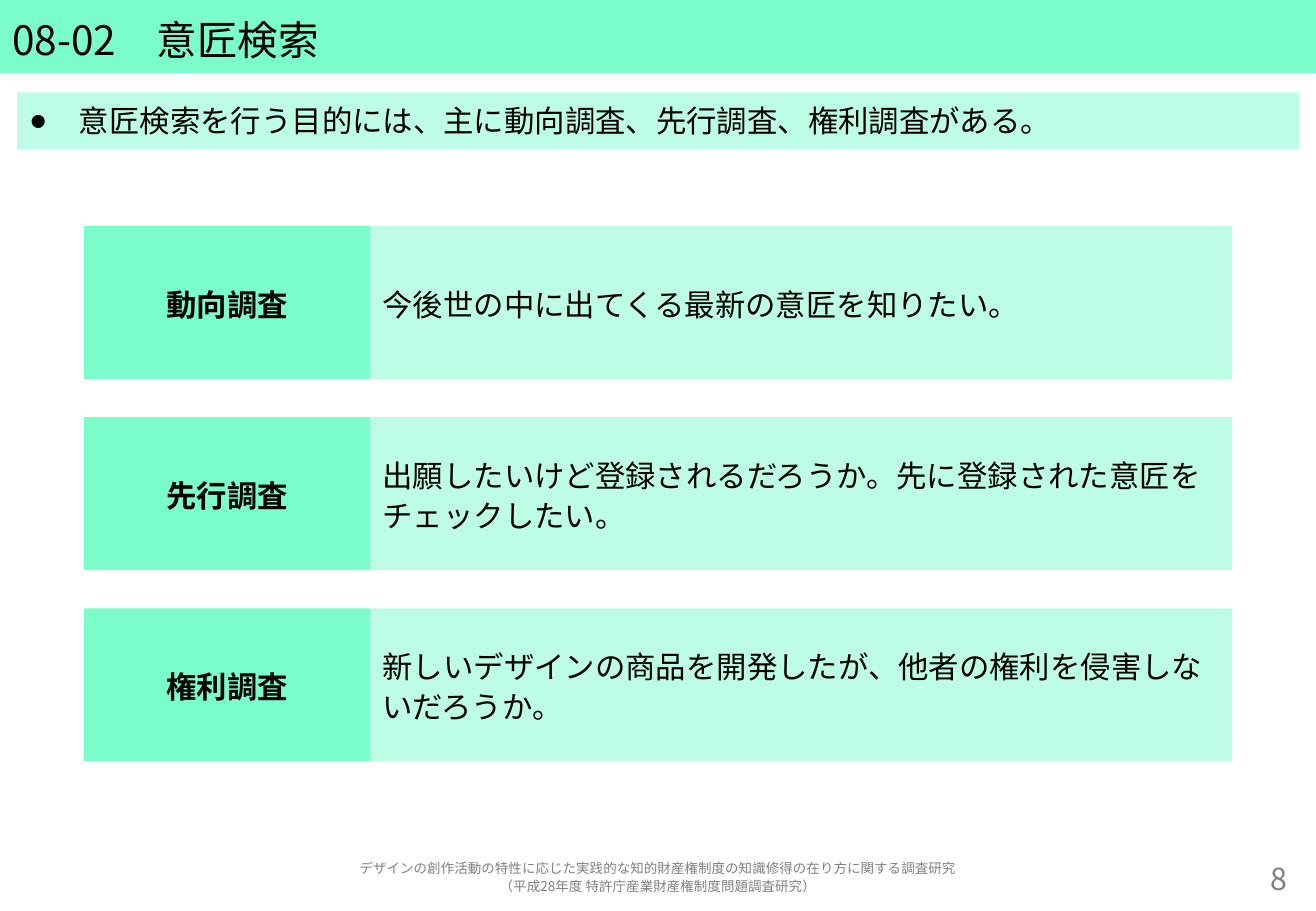
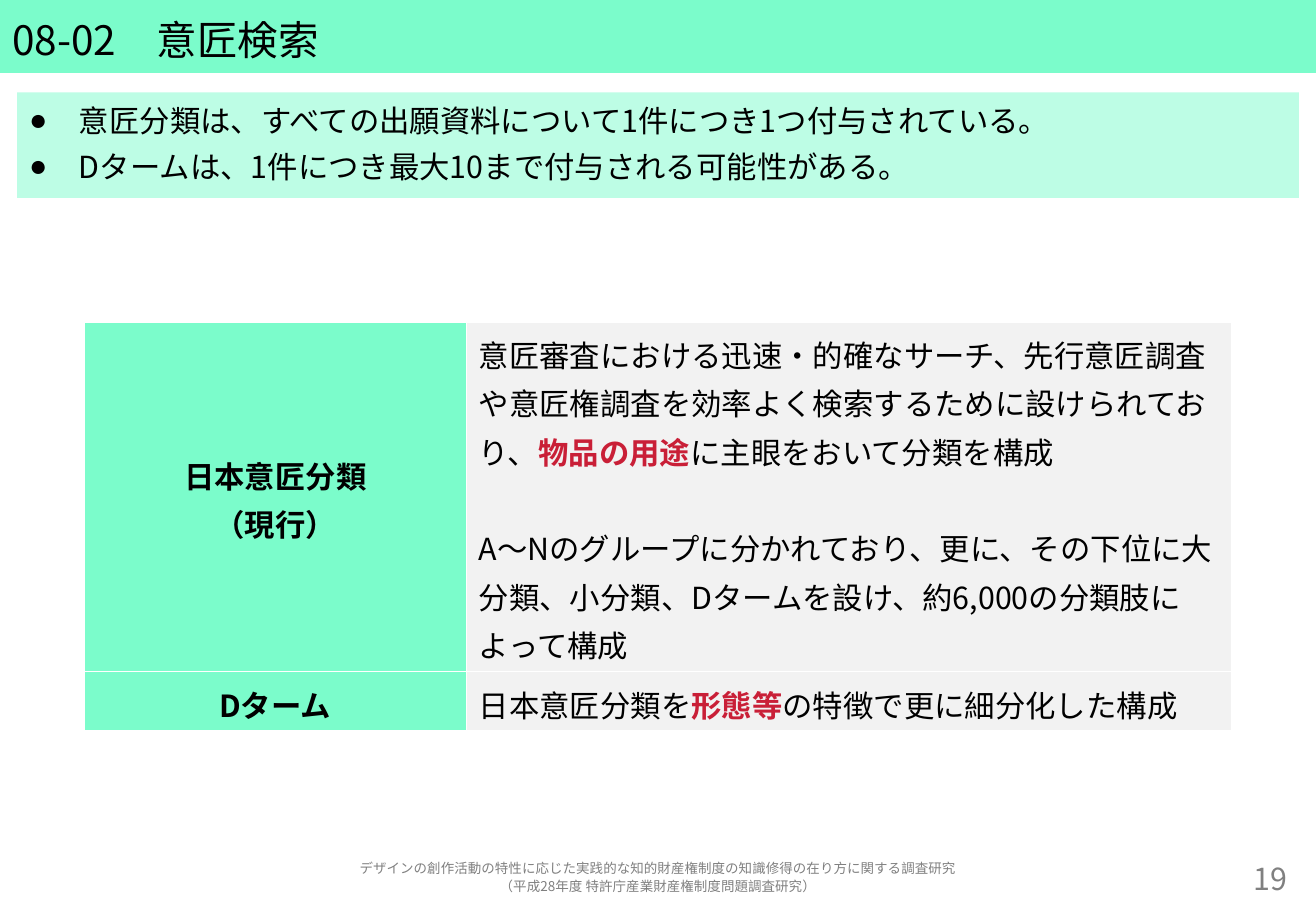
"""Build two slides on design searches."""
from pptx import Presentation
from pptx.dml.color import RGBColor as RGB
from pptx.enum.shapes import MSO_SHAPE as SHAPE
from pptx.enum.text import MSO_ANCHOR as ANCHOR, MSO_AUTO_SIZE as AUTO, PP_ALIGN as ALIGN
from pptx.oxml.ns import qn
from pptx.util import Inches, Pt
from lxml.etree import SubElement

COL = {"band": "7BFCCB", "pale": "BDFDE5", "grey": "F2F2F2", "foot": "808080",
       "ink": "000000", "red": "C91F37", "white": "FFFFFF"}
FONT = "Noto Sans CJK JP"


def paint(item, col):
    item.fill.solid()
    item.fill.fore_color.rgb = RGB.from_string(COL[col])


def write(frame, lines, size=18, bold=False, col="ink", align=ALIGN.LEFT,
          gap=0, bullet=False, anchor=ANCHOR.MIDDLE):
    """Fill a frame with paragraphs; parts between bars are bold red."""
    frame.word_wrap = True
    frame.vertical_anchor = anchor
    for i, line in enumerate(lines):
        para = frame.paragraphs[0] if i == 0 else frame.add_paragraph()
        para.alignment = align
        para.line_spacing = 1.1
        para.space_before = Pt(gap if i or bullet else 0)
        if bullet:
            prop = para._p.get_or_add_pPr()
            prop.set("marL", str(Inches(0.41)))
            prop.set("indent", str(-Inches(0.41)))
            SubElement(prop, qn("a:buChar"), char="●")
        for j, part in enumerate(line.split("|")):
            run = para.add_run()
            run.text = part
            font = run.font
            font.size = Pt(size)
            font.bold = bold or j % 2 == 1
            font.color.rgb = RGB.from_string(COL["red" if j % 2 else col])
            font.name = FONT
            SubElement(run._r.get_or_add_rPr(), qn("a:ea"), typeface=FONT)


deck = Presentation()
deck.slide_width, deck.slide_height = Inches(10.83), Inches(7.5)

FOOT = ["デザインの創作活動の特性に応じた実践的な知的財産権制度の知識修得の在り方に関する調査研究",
        "（平成28年度 特許庁産業財産権制度問題調査研究）"]
PAGES = [
    ("8", 0.47, ["意匠検索を行う目的には、主に動向調査、先行調査、権利調査がある。"]),
    ("19", 0.87, ["意匠分類は、すべての出願資料について1件につき1つ付与されている。",
                  "Dタームは、1件につき最大10まで付与される可能性がある。"]),
]
slides = []
for num, high, points in PAGES:
    slide = deck.slides.add_slide(deck.slide_layouts[1])
    slides.append(slide)
    title, body = slide.placeholders
    for box, area, col in ((title, (0, 0, 10.83, 0.6), "band"),
                           (body, (0.14, 0.76, 10.55, high), "pale")):
        box.left, box.top, box.width, box.height = map(Inches, area)
        paint(box, col)
        box.text_frame.auto_size = AUTO.NONE
    write(title.text_frame, ["08-02　意匠検索"], size=24)
    write(body.text_frame, points, gap=3.6, bullet=True, anchor=ANCHOR.TOP)
    for left, width, lines, size, align in ((9.35, 1.34, [num], 18, ALIGN.RIGHT),
                                            (0.14, 10.55, FOOT, 8, ALIGN.CENTER)):
        box = slide.shapes.add_textbox(Inches(left), Inches(7.06), Inches(width), Inches(0.31))
        write(box.text_frame, lines, size=size, col="foot", align=align)

KINDS = [
    ("動向調査", "今後世の中に出てくる最新の意匠を知りたい。"),
    ("先行調査", "出願したいけど登録されるだろうか。先に登録された意匠をチェックしたい。"),
    ("権利調査", "新しいデザインの商品を開発したが、他者の権利を侵害しないだろうか。"),
]
for i, (name, aim) in enumerate(KINDS):
    top = Inches(1.86 + i * 1.575)
    for left, width, col, words in ((0.69, 2.36, "band", name), (3.05, 7.09, "pale", aim)):
        box = slides[0].shapes.add_shape(SHAPE.RECTANGLE, Inches(left), top,
                                         Inches(width), Inches(1.26))
        box.shadow.inherit = False
        box.line.fill.background()
        paint(box, col)
        head = words == name
        write(box.text_frame, [words], bold=head, align=ALIGN.CENTER if head else ALIGN.LEFT)

ROWS = [
    (["日本意匠分類", "（現行）"],
     ["意匠審査における迅速・的確なサーチ、先行意匠調査や意匠権調査を効率よく検索するために設けられており、"
      "|物品の用途|に主眼をおいて分類を構成",
      "A～Nのグループに分かれており、更に、その下位に大分類、小分類、Dタームを設け、約6,000の分類肢によって構成"]),
    (["Dターム"], ["日本意匠分類を|形態等|の特徴で更に細分化した構成"]),
]
table = slides[1].shapes.add_table(2, 2, Inches(0.69), Inches(2.65),
                                   Inches(9.45), Inches(3.37)).table
table.first_row = table.horz_banding = False
table.columns[0].width, table.columns[1].width = Inches(3.15), Inches(6.3)
table.rows[0].height, table.rows[1].height = Inches(2.88), Inches(0.49)
for i, row in enumerate(ROWS):
    for j, lines in enumerate(row):
        cell = table.cell(i, j)
        prop = cell._tc.get_or_add_tcPr()
        for side in "LRTB":
            edge = SubElement(prop, qn("a:ln" + side), w=str(Pt(1)))
            fill = SubElement(edge, qn("a:solidFill"))
            SubElement(fill, qn("a:srgbClr"), val=COL["white"])
        paint(cell, "grey" if j else "band")
        cell.vertical_anchor = ANCHOR.MIDDLE
        write(cell.text_frame, lines, bold=j == 0, gap=28.7 * j,
              align=ALIGN.LEFT if j else ALIGN.CENTER, anchor=None)

deck.save("out.pptx")
